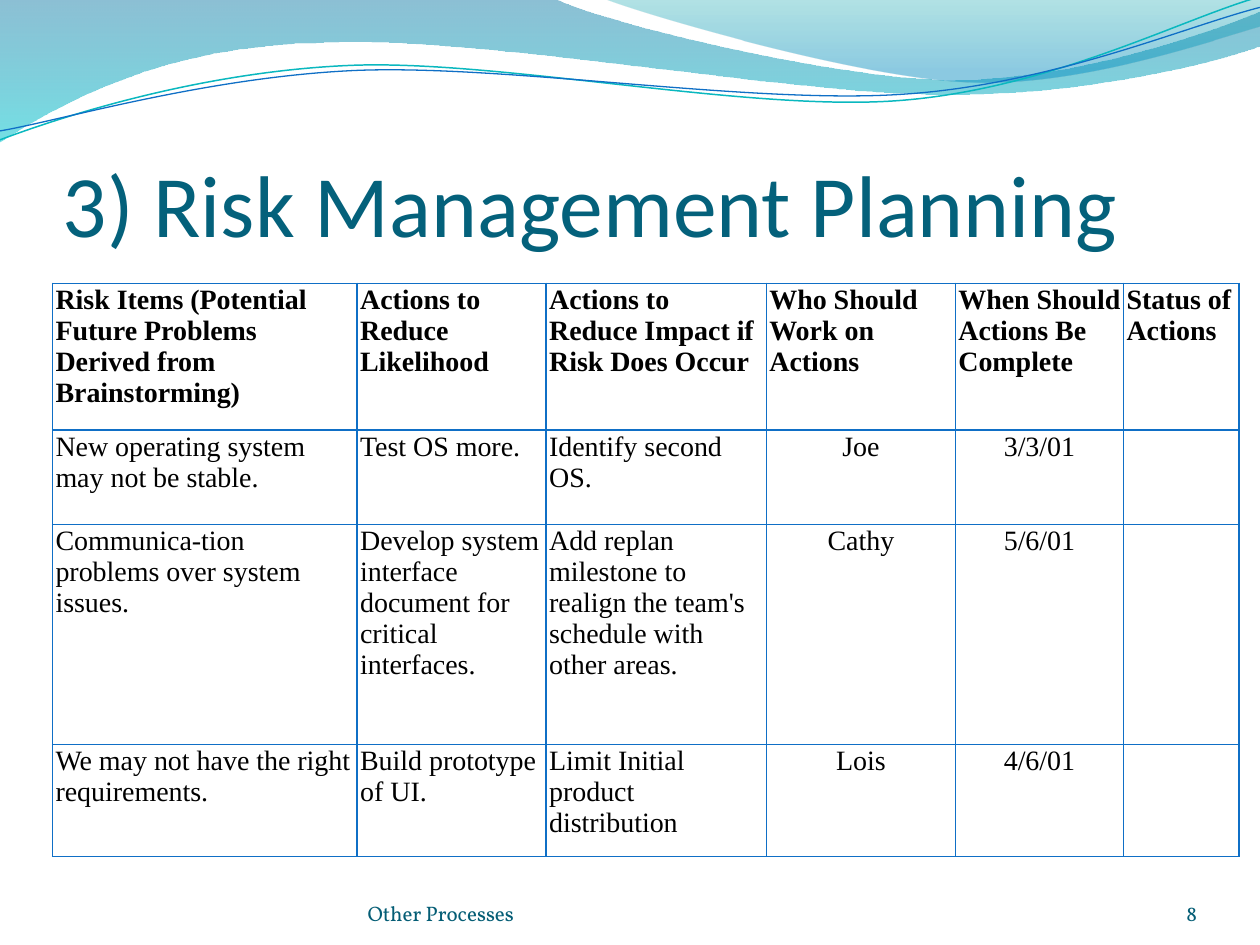
from lxml.etree import SubElement
from pptx import Presentation
from pptx.dml.color import RGBColor
from pptx.enum.text import MSO_ANCHOR, PP_ALIGN
from pptx.oxml.ns import qn
from pptx.util import Cm, Pt

COLORS = {
    "title": "04617B",
    "footer": "045D75",
    "text": "000000",
    "border": "0F6FC6",
    "teal_line": "0AB8BF",
    "blue_line": "0F6FC6",
    "wide_top": "0074A1",
    "wide_bottom": "00C6CF",
    "right_top": "00A1A9",
    "right_bottom": "008BBF",
}

WIDE_WAVE = [
    [(0, -0.03)],
    [(11.18, -0.03)],
    [(12.09, 0.43), (16.87, 1.6), (19.25, 1.6)],
    [(21.67, 1.6), (24.33, 0.66), (25.4, 0.23)],
    [(25.43, 0.91)],
    [(24.97, 1.12), (22.1, 1.93), (18.95, 1.9)],
    [(15.8, 1.9), (9.7, 0.71), (6.53, 0.86)],
    [(3.28, 0.89), (1.17, 2.11), (-0.03, 2.87)],
]
RIGHT_WAVE = [
    [(12.17, -0.03)],
    [(12.93, 0.28), (17.32, 1.57), (19.53, 1.65)],
    [(21.74, 1.75), (24.41, 0.81), (25.4, 0.53)],
    [(25.4, 0)],
]
TEAL_CURVE = [
    [(0, 2.82)],
    [(1.22, 2.36), (4.01, 1.45), (7.04, 1.32)],
    [(10.03, 1.19), (15.06, 2.26), (18.11, 2.03)],
    [(21.16, 1.8), (23.83, 0.38), (25.35, -0.05)],
]
BLUE_CURVE = [
    [(0, 2.64)],
    [(1.19, 2.44), (4.17, 1.55), (7.19, 1.42)],
    [(10.24, 1.3), (15.16, 2.11), (18.21, 1.9)],
    [(21.23, 1.7), (23.9, 0.53), (25.4, 0.15)],
]

COLUMN_WIDTHS = [6.14, 3.81, 4.44, 3.81, 3.39, 2.33]
ROW_HEIGHTS = [2.96, 1.9, 4.44, 2.26]
CENTERED_COLUMNS = (3, 4)
RISKS = [
    ["Risk Items (Potential Future Problems Derived from Brainstorming)",
     "Actions to Reduce Likelihood",
     "Actions to Reduce Impact if Risk Does Occur",
     "Who Should Work on Actions",
     "When Should Actions Be Complete",
     "Status of Actions"],
    ["New operating system may not be stable.", "Test OS more.",
     "Identify second OS.", "Joe", "3/3/01", ""],
    ["Communica-tion problems over system issues.",
     "Develop system interface document for critical interfaces.",
     "Add replan milestone to realign the team's schedule with other areas.",
     "Cathy", "5/6/01", ""],
    ["We may not have the right requirements.", "Build prototype of UI.",
     "Limit Initial product distribution", "Lois", "4/6/01", ""],
]


def color(name):
    return RGBColor.from_string(COLORS[name])


def bend_segments(shape, outline):
    outline_path = next(shape._element.iter(qn("a:path")))
    commands = iter(list(outline_path))
    for segment in outline:
        lines = [next(commands) for _ in segment]
        if len(lines) == 3:
            curve = outline_path.makeelement(qn("a:cubicBezTo"))
            lines[0].addprevious(curve)
            for line in lines:
                curve.append(line[0])
                outline_path.remove(line)


def add_outline(slide, box, outline, closed):
    left, top = box[:2]
    points = [(Cm(left + x), Cm(top + y)) for segment in outline for x, y in segment]
    builder = slide.shapes.build_freeform(*points[0])
    builder.add_line_segments(points[1:], close=closed)
    shape = builder.convert_to_shape()
    shape.shadow.inherit = False
    bend_segments(shape, outline)
    return shape


def add_wave(slide, box, outline, stops):
    shape = add_outline(slide, box, outline, True)
    shape.line.fill.background()
    shape.fill.gradient()
    shape.fill.gradient_angle = 270
    for stop, (position, name, _) in zip(shape.fill.gradient_stops, stops):
        stop.position = position
        stop.color.rgb = color(name)
    for element, (_, _, opacity) in zip(shape._element.iter(qn("a:srgbClr")), stops):
        SubElement(element, qn("a:alpha"), val=str(opacity * 1000))


def add_curve(slide, box, outline, name, width):
    shape = add_outline(slide, box, outline, False)
    shape.fill.background()
    shape.line.color.rgb = color(name)
    shape.line.width = Pt(width)


def add_header_waves(slide, box):
    add_wave(slide, box, WIDE_WAVE, [(0, "wide_top", 45), (1, "wide_bottom", 55)])
    add_wave(slide, box, RIGHT_WAVE, [(0, "right_top", 30), (0.8, "right_bottom", 45)])
    add_curve(slide, box, TEAL_CURVE, "teal_line", 0.85)
    add_curve(slide, box, BLUE_CURVE, "blue_line", 0.75)


def style_paragraph(paragraph, font_name, size, color_name, bold=False):
    paragraph.font.name = font_name
    paragraph.font.size = Pt(size)
    paragraph.font.bold = bold
    paragraph.font.color.rgb = color(color_name)


def add_text(slide, box, text, font_name, size, color_name, align=PP_ALIGN.LEFT, inset=0):
    frame = slide.shapes.add_textbox(*map(Cm, box)).text_frame
    frame.word_wrap = True
    frame.vertical_anchor = MSO_ANCHOR.BOTTOM
    frame.margin_left = frame.margin_right = frame.margin_bottom = 0
    frame.margin_top = Cm(inset)
    paragraph = frame.paragraphs[0]
    paragraph.text = text
    paragraph.alignment = align
    style_paragraph(paragraph, font_name, size, color_name)


def add_footer(slide, box):
    left, top, width, height = box
    add_text(slide, (left, top, 9.32, height), "Other Processes", "Vollkorn", 12, "footer")
    add_text(slide, (left + width - 2.11, top, 2.11, height), "8", "Vollkorn", 12,
             "footer", PP_ALIGN.RIGHT)


def add_borders(cell):
    properties = cell._tc.get_or_add_tcPr()
    for index, side in enumerate(("a:lnL", "a:lnR", "a:lnT", "a:lnB")):
        line = properties.makeelement(qn(side), {"w": str(Pt(1))})
        fill = SubElement(line, qn("a:solidFill"))
        SubElement(fill, qn("a:srgbClr"), val=COLORS["border"])
        properties.insert(index, line)


def add_risk_table(slide, box):
    table = slide.shapes.add_table(len(RISKS), len(COLUMN_WIDTHS), *map(Cm, box)).table
    table.first_row = table.horz_banding = False
    for column, width in zip(table.columns, COLUMN_WIDTHS):
        column.width = Cm(width)
    for row_index, (row, height) in enumerate(zip(table.rows, ROW_HEIGHTS)):
        row.height = Cm(height)
        for column_index, cell in enumerate(row.cells):
            cell.fill.background()
            cell.margin_left = cell.margin_right = Cm(0.06)
            cell.margin_top = cell.margin_bottom = Cm(0.02)
            paragraph = cell.text_frame.paragraphs[0]
            paragraph.text = RISKS[row_index][column_index]
            style_paragraph(paragraph, "Times New Roman", 16, "text", row_index == 0)
            if row_index and column_index in CENTERED_COLUMNS:
                paragraph.alignment = PP_ALIGN.CENTER
            add_borders(cell)


def main():
    presentation = Presentation()
    presentation.slide_width = Cm(25.4)
    presentation.slide_height = Cm(19.05)
    slide = presentation.slides.add_slide(presentation.slide_layouts[6])
    add_header_waves(slide, (0, 0, 25.4, 2.87))
    add_text(slide, (1.27, 1.96, 22.86, 3.18), "3) Risk Management Planning",
             "Calibri", 50, "title", inset=0.13)
    add_footer(slide, (7.41, 17.65, 16.72, 1.02))
    add_risk_table(slide, (1.06, 5.71, sum(COLUMN_WIDTHS), sum(ROW_HEIGHTS)))
    presentation.save("out.pptx")


if __name__ == "__main__":
    main()
